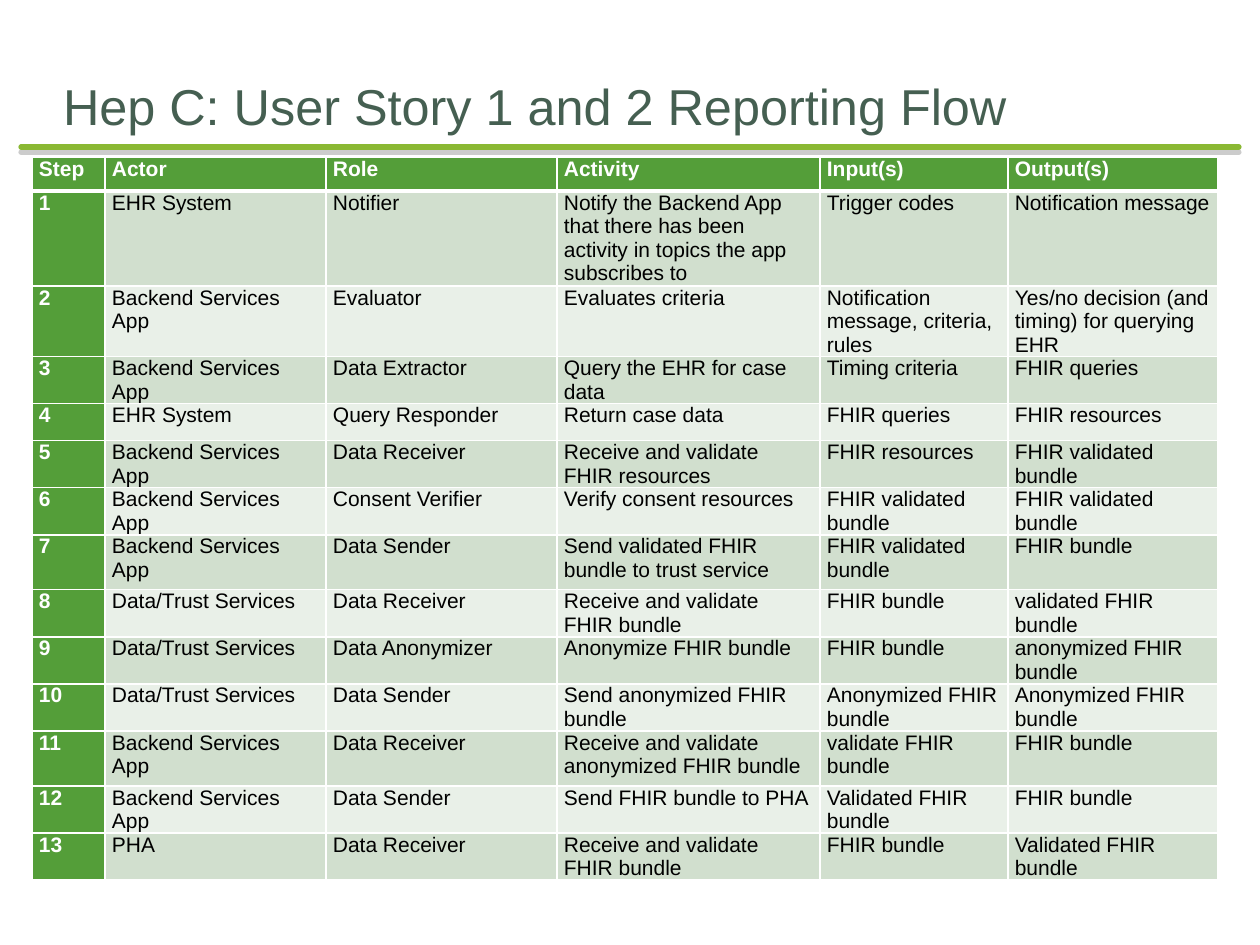
"""Build the Hep C reporting flow slide: a title, a rule and a table of steps."""
from lxml.etree import SubElement
from pptx import Presentation
from pptx.dml.color import RGBColor
from pptx.enum.shapes import MSO_CONNECTOR as Connector
from pptx.enum.text import MSO_ANCHOR as Anchor, MSO_AUTO_SIZE as AutoSize, PP_ALIGN as Align
from pptx.oxml.ns import qn
from pptx.util import Emu, Pt

WHITE = RGBColor(0xFF, 0xFF, 0xFF)
BLACK = RGBColor(0x00, 0x00, 0x00)
SLATE = RGBColor(0x45, 0x5F, 0x51)
LIME = RGBColor(0x8A, 0xB8, 0x33)
GRAY = RGBColor(0x80, 0x80, 0x80)
GREEN = RGBColor(0x54, 0x9E, 0x39)
BANDS = [RGBColor(0xE9, 0xF0, 0xE8), RGBColor(0xD1, 0xDF, 0xCE)]
FONT = "Arial"

COLUMN_WIDTHS = [73, 221, 231, 263, 188, 210]
ROW_HEIGHTS = [34, 95, 70, 47, 37, 47, 47, 55, 47, 47, 47, 55, 47, 47]
HEADINGS = ["Step", "Actor", "Role", "Activity", "Input(s)", "Output(s)"]
EHR, APP, TRUST = "EHR System", "Backend Services App", "Data/Trust Services"
STEPS = [
    (EHR, "Notifier",
     "Notify the Backend App that there has been activity in topics the app subscribes to",
     "Trigger codes", "Notification message"),
    (APP, "Evaluator", "Evaluates criteria", "Notification message, criteria, rules",
     "Yes/no decision (and timing) for querying EHR"),
    (APP, "Data Extractor", "Query the EHR for case data", "Timing criteria", "FHIR queries"),
    (EHR, "Query Responder", "Return case data", "FHIR queries", "FHIR resources"),
    (APP, "Data Receiver", "Receive and validate FHIR resources", "FHIR resources",
     "FHIR validated bundle"),
    (APP, "Consent Verifier", "Verify consent resources", "FHIR validated bundle",
     "FHIR validated bundle"),
    (APP, "Data Sender", "Send validated FHIR bundle to trust service",
     "FHIR validated bundle", "FHIR bundle"),
    (TRUST, "Data Receiver", "Receive and validate FHIR bundle", "FHIR bundle",
     "validated FHIR bundle"),
    (TRUST, "Data Anonymizer", "Anonymize FHIR bundle", "FHIR bundle",
     "anonymized FHIR bundle"),
    (TRUST, "Data Sender", "Send anonymized FHIR bundle", "Anonymized FHIR bundle",
     "Anonymized FHIR bundle"),
    (APP, "Data Receiver", "Receive and validate anonymized FHIR bundle",
     "validate FHIR bundle", "FHIR bundle"),
    (APP, "Data Sender", "Send FHIR bundle to PHA", "Validated FHIR bundle", "FHIR bundle"),
    ("PHA", "Data Receiver", "Receive and validate FHIR bundle", "FHIR bundle",
     "Validated FHIR bundle"),
]


def px(count):
    return Emu(round(count * 914400 / 126))


def style_text(paragraph, size, color, bold):
    paragraph.alignment = Align.LEFT
    for span in paragraph.runs:
        span.font.name = FONT
        span.font.size = Pt(size)
        span.font.bold = bold
        span.font.color.rgb = color


deck = Presentation()
deck.slide_width, deck.slide_height = px(1260), px(945)
page = deck.slides.add_slide(deck.slide_layouts[5])

title = page.shapes.title
title.left, title.top, title.width, title.height = px(63), px(63), px(1134), px(73)
frame = title.text_frame
frame.text = "Hep C: User Story 1 and 2 Reporting Flow"
frame.auto_size = AutoSize.NONE
frame.word_wrap = True
frame.vertical_anchor = Anchor.BOTTOM
frame.margin_left = frame.margin_right = frame.margin_bottom = 0
frame.margin_top = px(6)
style_text(frame.paragraphs[0], 28.8, SLATE, False)

rule = page.shapes.add_connector(Connector.STRAIGHT, px(21), px(147), px(1239), px(147))
rule.line.color.rgb = LIME
rule.line.width = Pt(3)
rule.line._get_or_add_ln().set("cap", "rnd")
effects = SubElement(rule._element.spPr, qn("a:effectLst"))
shadow = SubElement(effects, qn("a:outerShdw"), blurRad="0", dist=str(Pt(3)),
                    dir="5400000", rotWithShape="0")
tint = SubElement(shadow, qn("a:srgbClr"), val=str(GRAY))
SubElement(tint, qn("a:alpha"), val="40000")

rows = [HEADINGS] + [(str(number), *step) for number, step in enumerate(STEPS, 1)]
table = page.shapes.add_table(len(rows), len(HEADINGS), px(32), px(157),
                              px(sum(COLUMN_WIDTHS)), px(sum(ROW_HEIGHTS))).table
table.first_col = True
for column, width in zip(table.columns, COLUMN_WIDTHS):
    column.width = px(width)
for row, height in zip(table.rows, ROW_HEIGHTS):
    row.height = px(height)

for row_index, texts in enumerate(rows):
    for column_index, text in enumerate(texts):
        cell = table.cell(row_index, column_index)
        cell.text = text
        cell.margin_left = cell.margin_right = px(7)
        cell.margin_top = cell.margin_bottom = 0
        cell.vertical_anchor = Anchor.TOP
        heading = row_index == 0 or column_index == 0
        style_text(cell.text_frame.paragraphs[0], 12, WHITE if heading else BLACK, heading)
        thick_side = {0: "lnB", 1: "lnT"}.get(row_index)
        for side in ("lnL", "lnR", "lnT", "lnB"):
            border = SubElement(cell._tc.get_or_add_tcPr(), qn(f"a:{side}"),
                                w=str(Pt(3 if side == thick_side else 1)))
            paint = SubElement(border, qn("a:solidFill"))
            SubElement(paint, qn("a:srgbClr"), val=str(WHITE))
        cell.fill.solid()
        cell.fill.fore_color.rgb = GREEN if heading else BANDS[row_index % 2]

deck.save("out.pptx")
